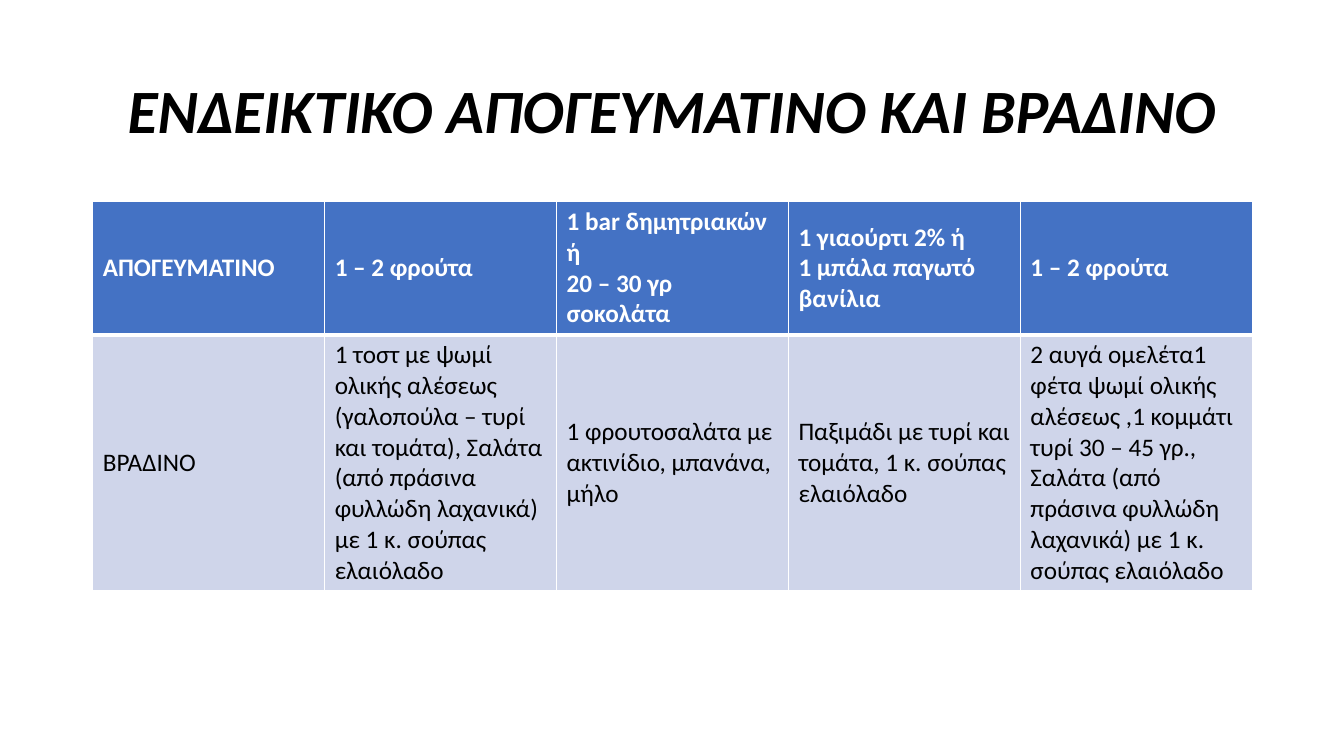
from lxml import etree
from pptx import Presentation
from pptx import util as u
from pptx.dml.color import RGBColor
from pptx.enum import text
from pptx.oxml.ns import qn

WHITE, BLACK, HEADER_BLUE, PALE_BLUE = "FFFFFF", "000000", "4472C4", "CFD5EA"
LEFT, WIDTH = 0.92, 11.5
ROW_HEIGHTS = (1.3, 2.5)
MEALS = [
    [
        "ΑΠΟΓΕΥΜΑΤΙΝΟ",
        "1 – 2 φρούτα",
        "1 bar δημητριακών ή\n20 – 30 γρ σοκολάτα",
        "1 γιαούρτι 2% ή\n1 μπάλα παγωτό βανίλια",
        "1 – 2 φρούτα",
    ],
    [
        "ΒΡΑΔΙΝΟ",
        "1 τοστ με ψωμί ολικής αλέσεως (γαλοπούλα – τυρί και τομάτα), "
        "Σαλάτα (από πράσινα φυλλώδη λαχανικά) με 1 κ. σούπας ελαιόλαδο",
        "1 φρουτοσαλάτα με ακτινίδιο, μπανάνα, μήλο",
        "Παξιμάδι με τυρί και τομάτα, 1 κ. σούπας ελαιόλαδο",
        "2 αυγά ομελέτα1 φέτα ψωμί ολικής αλέσεως ,1 κομμάτι τυρί 30 – 45 γρ.,  "
        "Σαλάτα (από πράσινα φυλλώδη λαχανικά) με 1 κ. σούπας ελαιόλαδο",
    ],
]


def rgb(hex_color):
    return RGBColor.from_string(hex_color)


def write(frame, words, size=18, color=BLACK, bold=False, italic=False,
          align=text.PP_ALIGN.LEFT, spacing=1.0):
    """Fill a text frame, one paragraph for each line of words."""
    frame.text = words
    frame.word_wrap = True
    for paragraph in frame.paragraphs:
        paragraph.alignment = align
        paragraph.line_spacing = spacing
        for run in paragraph.runs:
            font = run.font
            font.name, font.size = "Calibri", u.Pt(size)
            font.bold, font.italic = bold, italic
            font.color.rgb = rgb(color)


def set_borders(cell, **widths):
    """Draw white borders; widths are points by side: L, R, T, B."""
    properties = cell._tc.get_or_add_tcPr()
    for position, (side, width) in enumerate(widths.items()):
        line = etree.Element(qn(f"a:ln{side}"), w=str(u.Pt(width)))
        fill = etree.SubElement(line, qn("a:solidFill"))
        etree.SubElement(fill, qn("a:srgbClr"), val=WHITE)
        properties.insert(position, line)


def add_title(slide, words):
    title = slide.shapes.title
    title.left, title.top = u.Inches(LEFT), u.Inches(0.4)
    title.width, title.height = u.Inches(WIDTH), u.Inches(1.45)
    title.text_frame.vertical_anchor = text.MSO_ANCHOR.MIDDLE
    write(title.text_frame, words, size=44, bold=True, italic=True,
          align=text.PP_ALIGN.CENTER, spacing=0.9)


def add_meal_table(slide, meals):
    table = slide.shapes.add_table(
        len(meals), len(meals[0]), u.Inches(LEFT), u.Inches(2),
        u.Inches(WIDTH), u.Inches(sum(ROW_HEIGHTS))).table
    for column in table.columns:
        column.width = u.Inches(WIDTH / len(meals[0]))
    for r, (meal, height) in enumerate(zip(meals, ROW_HEIGHTS)):
        table.rows[r].height = u.Inches(height)
        header = r == 0
        for c, words in enumerate(meal):
            cell = table.cell(r, c)
            cell.vertical_anchor = text.MSO_ANCHOR.MIDDLE
            cell.fill.solid()
            cell.fill.fore_color.rgb = rgb(HEADER_BLUE if header else PALE_BLUE)
            write(cell.text_frame, words, bold=header,
                  color=WHITE if header else BLACK)
            set_borders(cell, L=1, R=1, T=1 if header else 3, B=3 if header else 1)


def main():
    deck = Presentation()
    deck.slide_width, deck.slide_height = u.Inches(13.33), u.Inches(7.5)
    slide = deck.slides.add_slide(deck.slide_layouts[5])
    add_title(slide, "ΕΝΔΕΙΚΤΙΚΟ ΑΠΟΓΕΥΜΑΤΙΝΟ ΚΑΙ ΒΡΑΔΙΝΟ")
    add_meal_table(slide, MEALS)
    deck.save("out.pptx")


if __name__ == "__main__":
    main()
